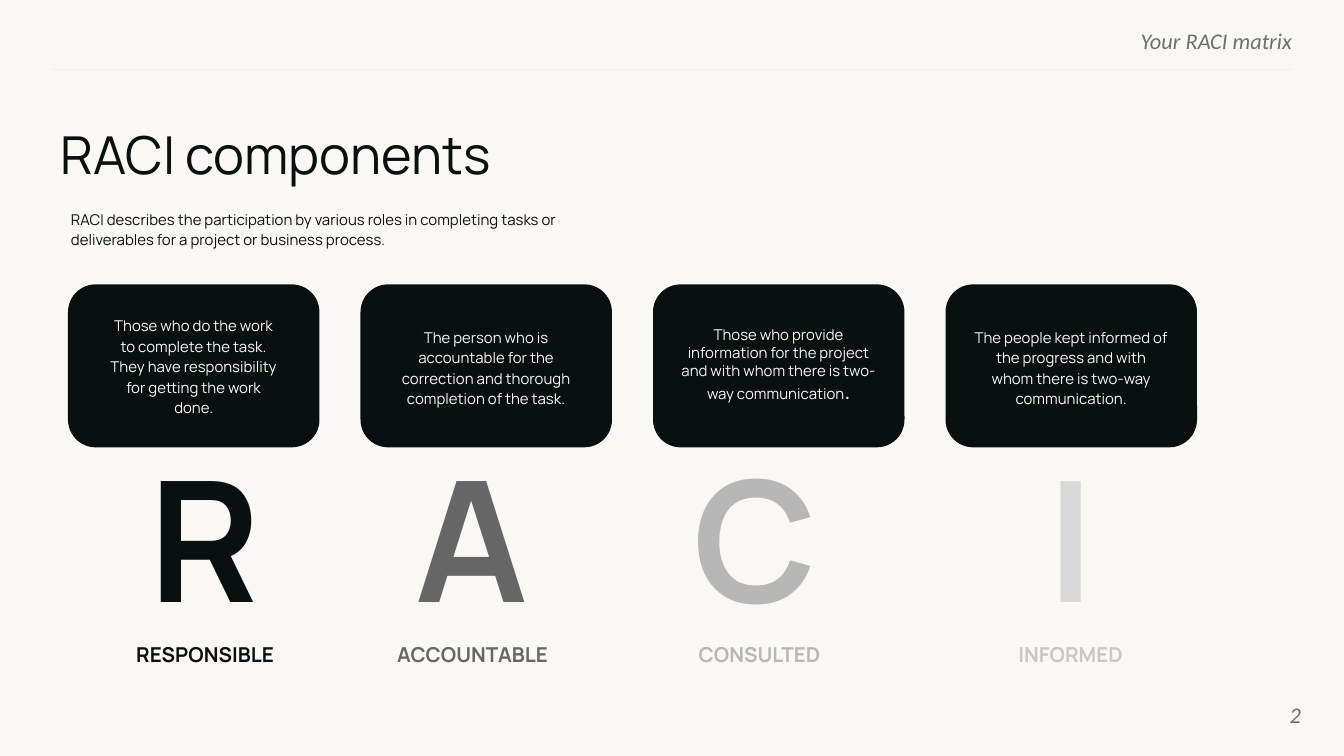
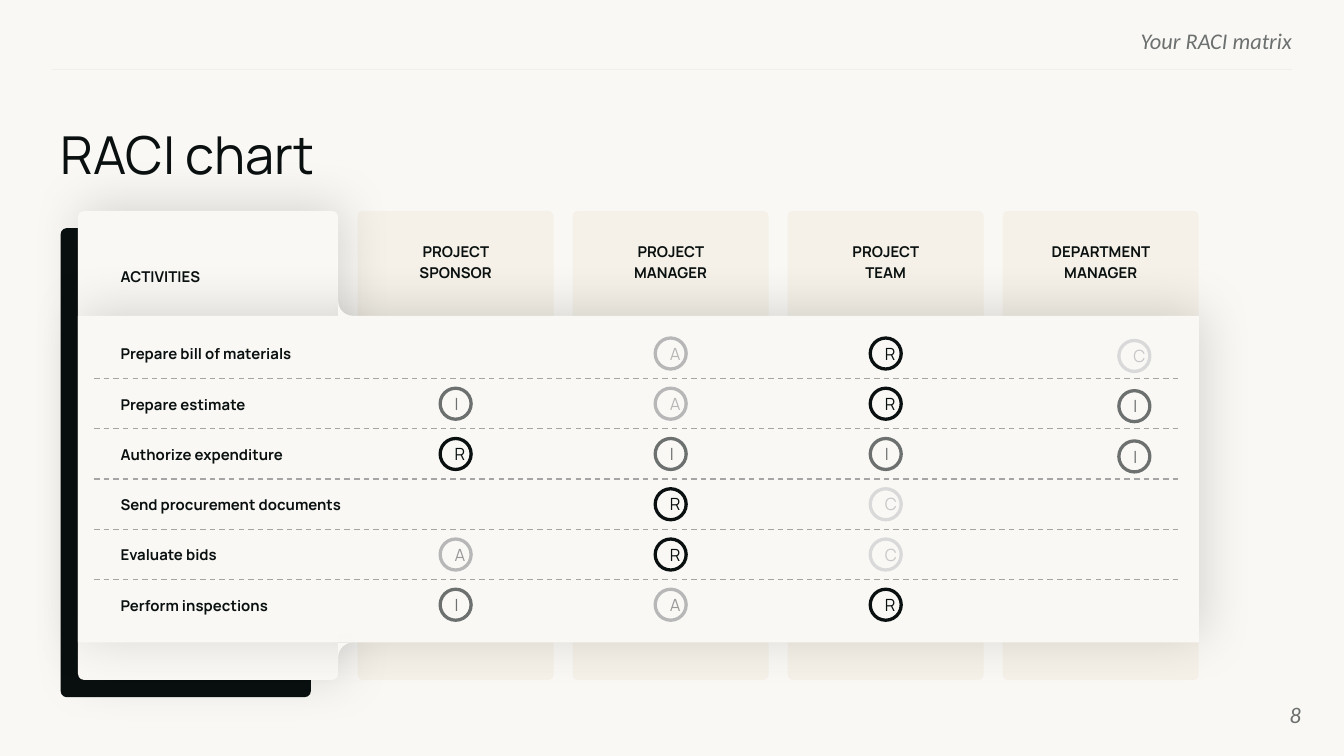
import math
from dataclasses import dataclass

from lxml import etree
from pptx import Presentation
from pptx.dml.color import RGBColor
from pptx.enum.dml import MSO_LINE
from pptx.enum.shapes import MSO_CONNECTOR, MSO_SHAPE
from pptx.enum.text import MSO_ANCHOR, MSO_AUTO_SIZE, PP_ALIGN
from pptx.oxml.ns import qn
from pptx.util import Pt

LEFT, CENTER, RIGHT = PP_ALIGN.LEFT, PP_ALIGN.CENTER, PP_ALIGN.RIGHT
TOP, MIDDLE = MSO_ANCHOR.TOP, MSO_ANCHOR.MIDDLE
GROW, FIXED = MSO_AUTO_SIZE.SHAPE_TO_FIT_TEXT, MSO_AUTO_SIZE.NONE
ROUNDED, RECTANGLE, ELLIPSE = MSO_SHAPE.ROUNDED_RECTANGLE, MSO_SHAPE.RECTANGLE, MSO_SHAPE.OVAL
STRAIGHT, DASH = MSO_CONNECTOR.STRAIGHT, MSO_LINE.DASH

COLORS = {
    "paper": "F9F8F5",
    "ink": "09100F",
    "slate": "6C706F",
    "rule": "EFEFEF",
    "dash": "A5A5A5",
    "sand": "F5F1E8",
    "dark": "666666",
    "mid": "999999",
    "light": "B7B7B7",
    "pale": "D9D9D9",
    "pale text": "C8C8C8",
    "shadow": "000000",
}


@dataclass(frozen=True)
class Style:
    size: float
    color: str = "ink"
    font: str = "Manrope"
    bold: bool = False
    italic: bool = False
    align: PP_ALIGN = LEFT
    anchor: MSO_ANCHOR = TOP
    spacing: float | None = None
    after: float | None = None
    inset: tuple[float, float] = (5.4, 2.7)
    fit: MSO_AUTO_SIZE = GROW


@dataclass(frozen=True)
class Box:
    left: float
    top: float
    width: float
    height: float

    def points(self) -> tuple[Pt, ...]:
        return Pt(self.left), Pt(self.top), Pt(self.width), Pt(self.height)


@dataclass(frozen=True)
class Component:
    letter: str
    label: str
    color: str
    label_color: str
    description: str
    text_top: float
    text_width: float
    text_height: float
    letter_center: float
    letter_width: float
    label_center: float
    label_width: float
    spacing: float | None = 1.15
    ending: str = ""


@dataclass(frozen=True)
class Role:
    name: str
    width: float
    marks: str
    shift: tuple[float, float] = (0, 0)


@dataclass(frozen=True)
class Activity:
    name: str
    width: float


RUNNING = Style(12, "slate", "Calibri", italic=True, align=RIGHT, inset=(0, 0), fit=FIXED)
PAGE = Style(12, "slate", "Calibri", italic=True, align=RIGHT, anchor=MIDDLE,
             inset=(0, 0), fit=FIXED)
TITLE = Style(28, after=10, inset=(0, 0), fit=FIXED)
INTRO = Style(8, spacing=1.15, fit=FIXED)
ENDING = Style(11, "paper", "Arial")
ROW_LABEL = Style(8, bold=True)
ROLE_LABEL = Style(8, bold=True, align=CENTER, anchor=MIDDLE, spacing=1.15)

COMPONENTS = [
    Component("R", "RESPONSIBLE", "ink", "ink",
              "Those who do the work to complete the task. They have responsibility "
              "for getting the work done.",
              165.6, 101, 59.8, 109.4, 69.8, 109.9, 88.6),
    Component("A", "ACCOUNTABLE", "dark", "dark",
              "The person who is accountable for the correction and thorough "
              "completion of the task.",
              171.9, 115.2, 48.2, 253, 77.8, 253.2, 98.6),
    Component("C", "CONSULTED", "light", "light",
              "Those who provide information for the project and with whom there "
              "is two-way communication",
              171.8, 119.5, 48.2, 404.6, 82.1, 406.9, 80.6, None, "."),
    Component("I", "INFORMED", "pale", "pale text",
              "The people kept informed of the progress and with whom there is "
              "two-way communication.",
              171.9, 115.2, 48.2, 573.8, 37.4, 573.6, 76),
]

# One mark per activity; a dash leaves the cell empty.
ROLES = [
    Role("PROJECT SPONSOR", 71.3, "-IR-AI"),
    Role("PROJECT MANAGER", 71.3, "AAIRRA"),
    Role("PROJECT TEAM", 62.6, "RRICCR"),
    Role("DEPARTMENT MANAGER", 78.5, "CII---", (18, 1.3)),
]
ACTIVITIES = [
    Activity("Prepare bill of materials", 122.4),
    Activity("Prepare estimate", 105.1),
    Activity("Authorize expenditure", 122.4),
    Activity("Send procurement documents", 149),
    Activity("Evaluate bids", 82.1),
    Activity("Perform inspections", 133.9),
]
MARK_COLORS = {"R": "ink", "A": "light", "C": "pale", "I": "slate"}
FIRST_DARK_A_ROW = 4
ROW_PITCH = 26.92


def rgb(name: str) -> RGBColor:
    return RGBColor.from_string(COLORS[name])


def add_run(paragraph, text: str, style: Style) -> None:
    run = paragraph.add_run()
    run.text = text
    formats = {"size": Pt(style.size), "name": style.font,
               "bold": style.bold, "italic": style.italic}
    for attribute, value in formats.items():
        setattr(run.font, attribute, value)
    run.font.color.rgb = rgb(style.color)


def write(shape, text: str, style: Style):
    """Fill a shape's text frame and return its paragraph."""
    frame = shape.text_frame
    side, edge = (Pt(inset) for inset in style.inset)
    paragraph = frame.paragraphs[0]
    frame_formats = {"word_wrap": True, "auto_size": style.fit,
                     "vertical_anchor": style.anchor,
                     "margin_left": side, "margin_right": side,
                     "margin_top": edge, "margin_bottom": edge}
    paragraph_formats = {"alignment": style.align, "line_spacing": style.spacing,
                         "space_after": None if style.after is None else Pt(style.after)}
    for target, formats in ((frame, frame_formats), (paragraph, paragraph_formats)):
        for attribute, value in formats.items():
            setattr(target, attribute, value)
    add_run(paragraph, text, style)
    return paragraph


def add_text(slide, box: Box, text: str, style: Style):
    return write(slide.shapes.add_textbox(*box.points()), text, style)


def add_centered(slide, center: float, top: float, width: float, height: float,
                 text: str, style: Style):
    return add_text(slide, Box(center - width / 2, top, width, height), text, style)


def paint(shape, fill: str | None, line: str | None = None, weight: float = 0.75) -> None:
    shape.shadow.inherit = False
    if fill:
        shape.fill.solid()
        shape.fill.fore_color.rgb = rgb(fill)
    else:
        shape.fill.background()
    if line:
        shape.line.color.rgb = rgb(line)
        shape.line.width = Pt(weight)
    else:
        shape.line.fill.background()


def add_rounded(slide, box: Box, fill: str, corner: float, line: str | None = None):
    shape = slide.shapes.add_shape(ROUNDED, *box.points())
    shape.adjustments[0] = corner
    paint(shape, fill, line)
    return shape


def add_rule(slide, left: float, right: float, y: float, color: str, dash=None) -> None:
    rule = slide.shapes.add_connector(STRAIGHT, Pt(left), Pt(y), Pt(right), Pt(y))
    rule.line.color.rgb = rgb(color)
    rule.line.width = Pt(0.75)
    rule.line.dash_style = dash
    etree.SubElement(rule._element.spPr, qn("a:effectLst"))


def cast_shadow(shape) -> None:
    effects = shape._element.spPr.find(qn("a:effectLst"))
    outer = etree.SubElement(effects, qn("a:outerShdw"), blurRad=str(Pt(28)),
                             dist=str(Pt(3)), dir=str(319 * 60000),
                             algn="bl", rotWithShape="0")
    color = etree.SubElement(outer, qn("a:srgbClr"), val=COLORS["shadow"])
    etree.SubElement(color, qn("a:alpha"), val="14000")


def add_fillet(slide, x: float, y: float, radius: float, direction: int):
    """Fill the inner corner at (x, y); direction is -1 for upwards, 1 for downwards."""
    steps = 12
    angles = [math.pi / 2 * step / steps for step in range(steps + 1)]
    arc = [(Pt(x + radius * (1 - math.cos(angle))),
            Pt(y + direction * radius * (1 - math.sin(angle)))) for angle in angles]
    builder = slide.shapes.build_freeform(Pt(x), Pt(y), scale=1.0)
    builder.add_line_segments(arc, close=True)
    fillet = builder.convert_to_shape()
    paint(fillet, "paper")
    return fillet


def start_slide(deck, title: str, page: int):
    slide = deck.slides.add_slide(deck.slide_layouts[6])
    slide.background.fill.solid()
    slide.background.fill.fore_color.rgb = rgb("paper")
    add_text(slide, Box(415.2, 14.4, 277, 13), "Your RACI matrix", RUNNING)
    add_rule(slide, 28, 692, 37.4, "rule")
    add_text(slide, Box(32.6, 65.5, 664.6, 36.7), title, TITLE)
    add_text(slide, Box(653.8, 367.2, 43.2, 31), str(page), PAGE)
    return slide


def build_components(deck) -> None:
    slide = start_slide(deck, "RACI components", 2)
    add_text(slide, Box(32.6, 108.5, 286.6, 30.2),
             "RACI describes the participation by various roles in completing tasks "
             "or deliverables for a project or business process.", INTRO)
    for index, part in enumerate(COMPONENTS):
        card = Box(36.8 + 156.7 * index, 152.7, 134, 86.6)
        add_rounded(slide, card, "ink", 0.167, "ink")
        description = add_centered(
            slide, card.left + card.width / 2, part.text_top, part.text_width,
            part.text_height, part.description,
            Style(8, "paper", align=CENTER, spacing=part.spacing))
        if part.ending:
            add_run(description, part.ending, ENDING)
        add_centered(slide, part.letter_center, 230.2, part.letter_width, 114.5,
                     part.letter, Style(90, part.color, bold=True, align=CENTER))
        add_centered(slide, part.label_center, 341.4, part.label_width, 18.7,
                     part.label, Style(11, part.label_color, bold=True, align=CENTER))


def add_mark(slide, center: float, top: float, mark: str, row: int) -> None:
    diameter = 16.6
    color = MARK_COLORS[mark]
    box = Box(center - diameter / 2, top, diameter, diameter)
    ring = slide.shapes.add_shape(ELLIPSE, *box.points())
    paint(ring, None, color, 1.75)
    text_color = "pale text" if mark == "C" else color
    if mark == "A" and row >= FIRST_DARK_A_ROW:
        text_color = "mid"
    write(ring, mark, Style(9, text_color, align=CENTER, anchor=MIDDLE, fit=FIXED))


def build_chart(deck) -> None:
    slide = start_slide(deck, "RACI chart", 8)
    columns = [Box(191.6 + 115.2 * index, 113, 105, 251.3) for index in range(len(ROLES))]
    add_rounded(slide, Box(32.5, 122.2, 134, 251.3), "ink", 0.024)
    for column in columns:
        add_rounded(slide, column, "sand", 0.027)

    activities_tab = add_rounded(slide, Box(41.8, 113, 139.4, 251.3), "paper", 0.024)
    panel = slide.shapes.add_shape(RECTANGLE, *Box(41.8, 169.2, 600.5, 175).points())
    paint(panel, "paper")
    fillets = [add_fillet(slide, 181.2, y, 7.9, direction)
               for y, direction in ((169.2, -1), (344.2, 1))]
    for surface in (activities_tab, panel, *fillets):
        cast_shadow(surface)

    add_text(slide, Box(59.2, 140.4, 82.1, 15.1), "ACTIVITIES", ROW_LABEL)
    for row, activity in enumerate(ACTIVITIES):
        offset = ROW_PITCH * row
        add_text(slide, Box(59.2, 182.1 + offset, activity.width, 15.1),
                 activity.name, ROW_LABEL)
        if row < len(ACTIVITIES) - 1:
            add_rule(slide, 50.4, 633.2, 202.8 + offset, "dash", DASH)
    for role, column in zip(ROLES, columns):
        center = column.left + column.width / 2
        add_centered(slide, center, 126.5, role.width, 26.6, role.name, ROLE_LABEL)
        right, down = role.shift
        for row, mark in enumerate(role.marks):
            if mark != "-":
                add_mark(slide, center + right, 181.1 + down + ROW_PITCH * row, mark, row)


def main() -> None:
    deck = Presentation()
    deck.slide_width, deck.slide_height = Pt(720), Pt(405)
    build_components(deck)
    build_chart(deck)
    deck.save("out.pptx")


if __name__ == "__main__":
    main()
